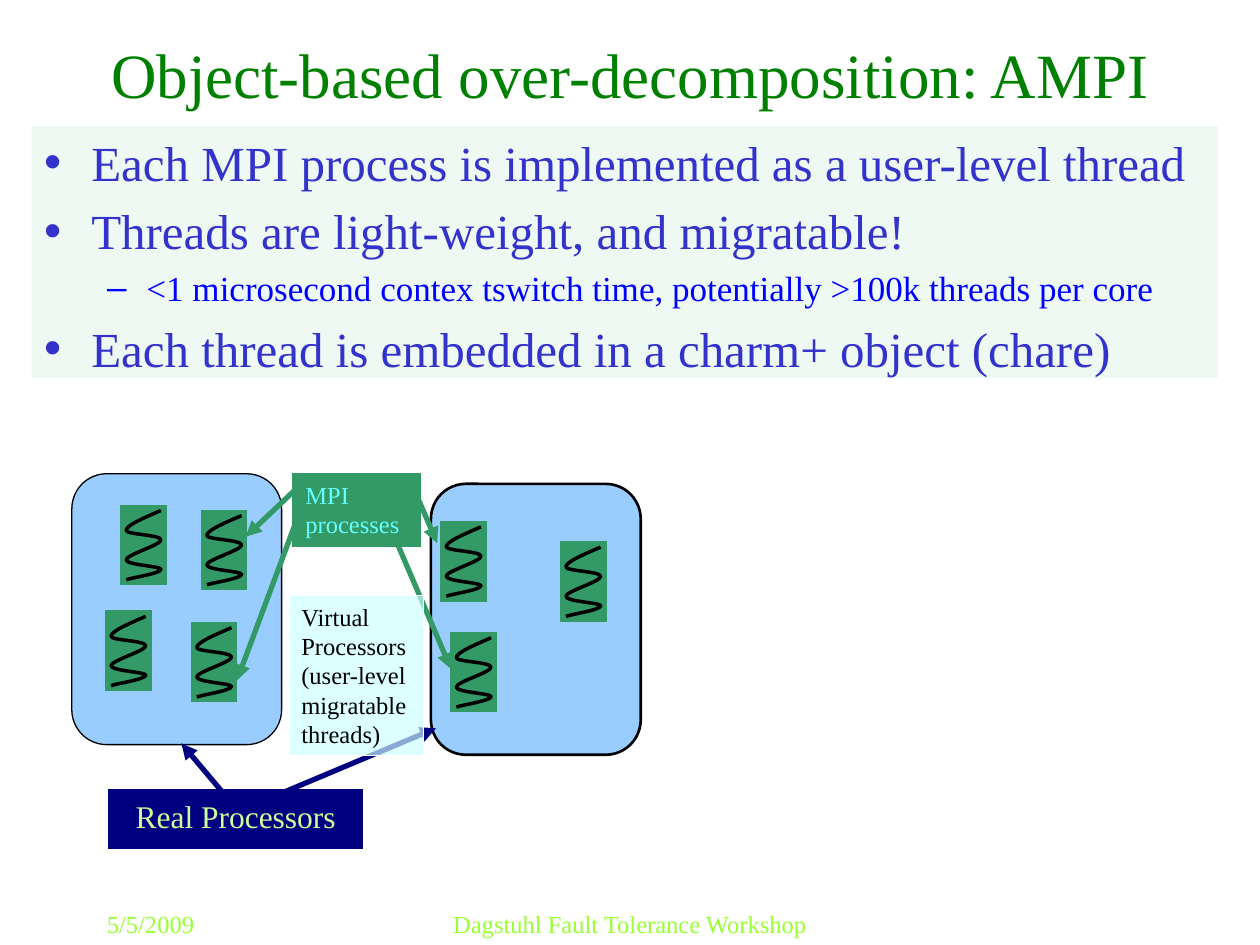
from typing import NamedTuple

import pptx
import pptx.dml.color
import pptx.enum.shapes
import pptx.enum.text
import pptx.oxml
import pptx.oxml.ns
import pptx.util

COLORS = {
    "title": "008000", "bullet": "3333CC", "detail": "0000FF", "panel": "EEF9F4",
    "footer": "99FF33", "processor": "99CCFF", "black": "000000", "white": "FFFFFF",
    "navy": "000080", "lime": "CCFF99", "green": "339966", "aqua": "66FFFF",
    "ice": "CCFFFF",
}
FONT = "Times New Roman"
CELL = pptx.util.Inches(10) / 120  # the slide is a grid of 120 columns by 90 rows
SHAPE = pptx.enum.shapes.MSO_SHAPE
ALIGN = pptx.enum.text.PP_ALIGN


class Box(NamedTuple):
    col: float
    row: float
    cols: float
    rows: float


class Text(NamedTuple):
    words: str
    size: int
    color: str
    align: ALIGN = ALIGN.LEFT
    level: int = 0


class Arrow(NamedTuple):
    col1: float
    row1: float
    col2: float
    row2: float


BULLETS = [
    Text("Each MPI process is implemented as a user-level thread", 28, "bullet"),
    Text("Threads are light-weight, and migratable!", 28, "bullet"),
    Text("<1 microsecond contex tswitch time, potentially >100k threads per core",
         20, "detail", level=1),
    Text("Each thread is embedded in a charm+ object (chare)", 28, "bullet"),
]
PROCESSOR_ARROWS = [Arrow(21.12, 75.36, 17.28, 70.8), Arrow(27.24, 75.36, 41.52, 69.36)]
MPI_ARROWS = [
    Arrow(28.2, 46.56, 23.4, 51.12), Arrow(28.2, 49.68, 22.56, 64.8),
    Arrow(37.92, 51.96, 42.96, 63.72), Arrow(39, 45.6, 41.64, 51.72),
]
THREADS = [(11.52, 48.12), (19.2, 48.6), (18.24, 59.28), (53.4, 51.6),
           (42.96, 60.24), (42, 49.68), (10.08, 58.2)]
# Bezier points of the coil, in cells from the corner of its thread
COIL = [
    (3.8, 0.5), (2.2, 1.2), (0.5, 1.9), (0.5, 2.4), (0.5, 2.8), (3.8, 2.8),
    (3.8, 3.3), (3.8, 3.8), (0.5, 4.7), (0.5, 5.2), (0.5, 5.7), (3.8, 5.8),
    (3.8, 6.1), (3.8, 6.5), (1, 6.9), (0.5, 7.1),
]


def emu(cells: float) -> int:
    return round(cells * CELL)


def rgb(name: str) -> pptx.dml.color.RGBColor:
    return pptx.dml.color.RGBColor.from_string(COLORS[name])


def element(tag: str, attributes: str = ""):
    return pptx.oxml.parse_xml(
        f'<a:{tag} {pptx.oxml.ns.nsdecls("a")} {attributes}/>')


def place(sp, box: Box) -> None:
    sp.left, sp.top, sp.width, sp.height = map(emu, box)


def write(tf, texts: list[Text]) -> None:
    tf.word_wrap = True
    tf.auto_size = pptx.enum.text.MSO_AUTO_SIZE.NONE
    for i, text in enumerate(texts):
        p = tf.add_paragraph() if i else tf.paragraphs[0]
        p.level, p.alignment = text.level, text.align
        r = p.add_run()
        r.text = text.words
        r.font.name, r.font.size = FONT, pptx.util.Pt(text.size)
        r.font.color.rgb = rgb(text.color)


def add_label(shapes, box: Box, text: Text) -> None:
    write(shapes.add_textbox(*map(emu, box)).text_frame, [text])


def set_line(sp, color: str, width: float) -> None:
    sp.line.color.rgb = rgb(color)
    sp.line.width = pptx.util.Pt(width)


def add_block(shapes, box: Box, fill: str, line: str, width: float = 0.75,
              text: Text | None = None, kind: SHAPE = SHAPE.RECTANGLE):
    sp = shapes.add_shape(kind, *map(emu, box))
    sp.shadow.inherit = False
    sp.fill.solid()
    sp.fill.fore_color.rgb = rgb(fill)
    set_line(sp, line, width)
    sp.line._get_or_add_ln().append(element("miter", 'lim="800000"'))
    if text:
        sp.text_frame.vertical_anchor = pptx.enum.text.MSO_ANCHOR.TOP
        write(sp.text_frame, [text])
    return sp


def add_arrow(shapes, arrow: Arrow, color: str) -> None:
    line = shapes.add_connector(pptx.enum.shapes.MSO_CONNECTOR.STRAIGHT,
                                *map(emu, arrow))
    set_line(line, color, 3)
    line.line._get_or_add_ln().append(element("tailEnd", 'type="triangle"'))
    line._element.spPr.append(element("effectLst"))


def add_coil(shapes, col: float, row: float) -> None:
    """Draw an open outline, then join each three points into one Bezier curve."""
    start, *rest = [(emu(col + x), emu(row + y)) for x, y in COIL]
    builder = shapes.build_freeform(*start)
    builder.add_line_segments(rest, close=False)
    sp = builder.convert_to_shape()
    sp.shadow.inherit = False
    sp.fill.background()
    set_line(sp, "black", 2)
    outline = sp._element.spPr.find(".//" + pptx.oxml.ns.qn("a:path"))
    steps = outline.findall(pptx.oxml.ns.qn("a:lnTo"))
    for i in range(0, len(steps), 3):
        curve = element("cubicBezTo")
        for step in steps[i:i + 3]:
            curve.append(step[0])
            outline.remove(step)
        outline.append(curve)


def main() -> None:
    prs = pptx.Presentation()
    prs.slide_width, prs.slide_height = emu(120), emu(90)
    s = prs.slides.add_slide(prs.slide_layouts[1])

    title, body = s.placeholders
    place(title, Box(4, 3, 112, 8))
    title.text_frame.vertical_anchor = pptx.enum.text.MSO_ANCHOR.MIDDLE
    write(title.text_frame, [Text("Object-based over-decomposition: AMPI",
                                  36, "title", ALIGN.CENTER)])
    place(body, Box(3, 12, 113, 24))
    body.fill.solid()
    body.fill.fore_color.rgb = rgb("panel")
    write(body.text_frame, BULLETS)

    add_label(s.shapes, Box(9, 86, 25, 4), Text("5/5/2009", 14, "footer"))
    add_label(s.shapes, Box(41, 86, 38, 4),
              Text("Dagstuhl Fault Tolerance Workshop", 14, "footer", ALIGN.CENTER))

    for col, row, width in ((41.04, 46.08, 1.5), (6.84, 45.12, 0.75)):
        add_block(s.shapes, Box(col, row, 19.98, 25.8), "processor", "black", width,
                  kind=SHAPE.ROUNDED_RECTANGLE)
    real = s.shapes.add_group_shape().shapes
    add_block(real, Box(10.56, 75.36, 23.8, 5.3), "navy", "navy", 3,
              Text("Real Processors", 18, "lime", ALIGN.CENTER))
    for arrow in PROCESSOR_ARROWS:
        add_arrow(real, arrow, "navy")

    add_block(s.shapes, Box(27.9, 45.12, 12.12, 6.96), "green", "green",
              text=Text("MPI processes", 14, "aqua"))
    for arrow in MPI_ARROWS:
        add_arrow(s.shapes, arrow, "green")
    for col, row in THREADS:
        add_block(s.shapes, Box(col, row, 4.32, 7.56), "green", "green")
    coils = s.shapes.add_group_shape().shapes
    for col, row in THREADS:
        add_coil(coils, col, row)

    note = add_block(
        s.shapes, Box(27.52, 56.7, 12.84, 15.24), "ice", "white",
        text=Text("Virtual Processors (user-level migratable threads)", 14, "black"))
    color = note._element.spPr.find(".//" + pptx.oxml.ns.qn("a:srgbClr"))
    color.append(element("alpha", 'val="67000"'))

    prs.save("out.pptx")


if __name__ == "__main__":
    main()
